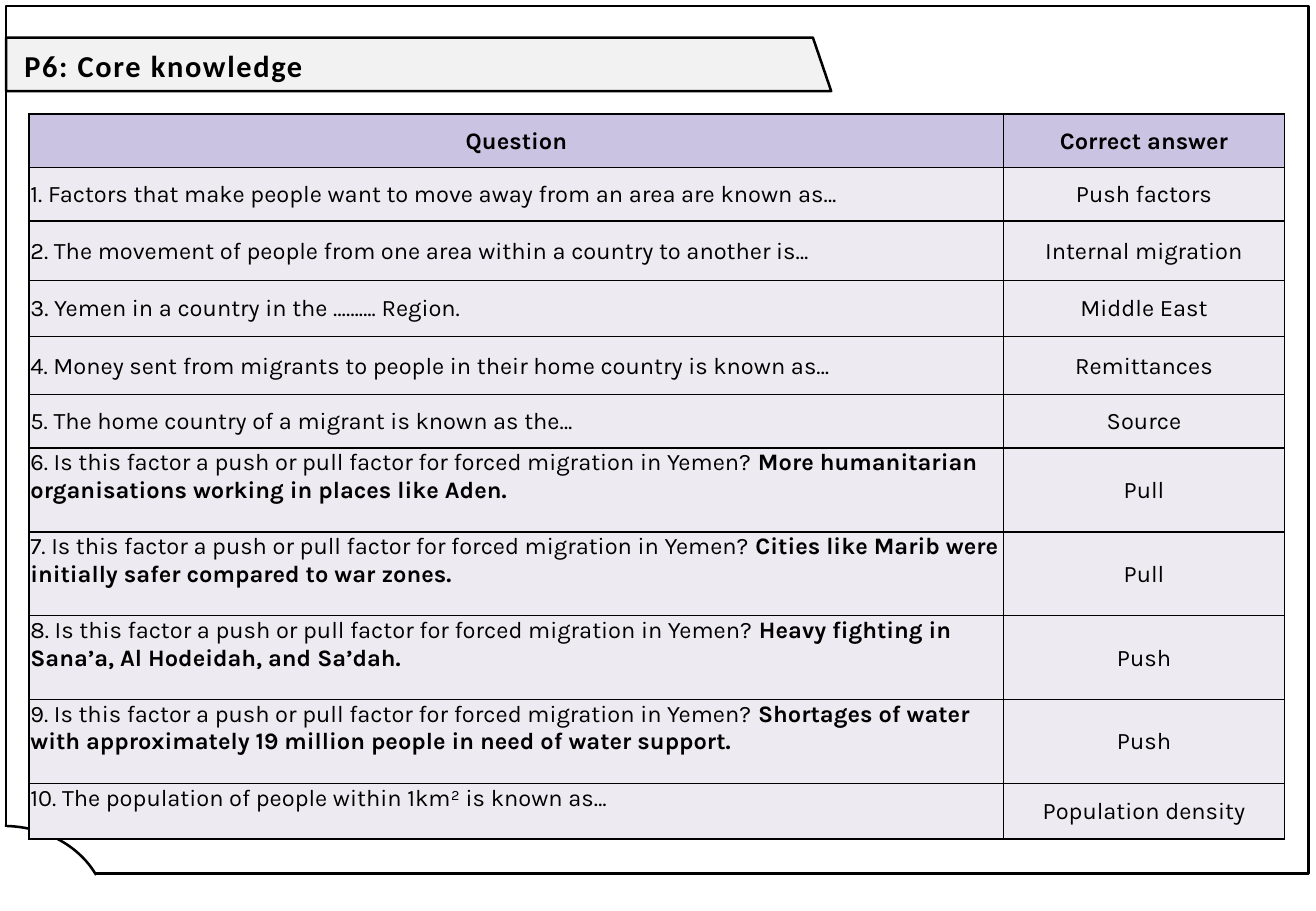
from lxml import etree
from pptx import Presentation
from pptx import util as u
from pptx.dml.color import RGBColor
from pptx.enum import shapes, text
from pptx.oxml import ns

BLACK = RGBColor(0x00, 0x00, 0x00)
WHITE = RGBColor(0xFF, 0xFF, 0xFF)
BANNER_GREY = RGBColor(0xF2, 0xF2, 0xF2)
HEADER_LILAC = RGBColor(0xCA, 0xC4, 0xE2)
ROW_LILAC = RGBColor(0xED, 0xEA, 0xF1)

FACTOR = "Is this factor a push or pull factor for forced migration in Yemen? "
QUIZ = [
    ("Factors that make people want to move away from an area are known as…", "", "Push factors"),
    ("The movement of people from one area within a country to another is…", "", "Internal migration"),
    ("Yemen in a country in the ………. Region.", "", "Middle East"),
    ("Money sent from migrants to people in their home country is known as…", "", "Remittances"),
    ("The home country of a migrant is known as the…", "", "Source"),
    (FACTOR, "More humanitarian organisations working in places like Aden.", "Pull"),
    (FACTOR, "Cities like Marib were initially safer compared to war zones.", "Pull"),
    (FACTOR, "Heavy fighting in Sana’a, Al Hodeidah, and Sa’dah.", "Push"),
    (FACTOR, "Shortages of water with approximately 19 million people in need of water support.", "Push"),
    ("The population of people within 1km² is known as…", "", "Population density"),
]
COLUMN_WIDTHS = [8.02, 2.31]
ROW_HEIGHTS = [0.44, 0.44, 0.49, 0.46, 0.48, 0.44] + [0.69] * 4 + [0.46]
FIRST_TOP_ALIGNED = 6


class QuizSlide:
    title_font = "Calibri"
    table_font = "Karla"
    outline = u.Pt(1.5)

    def __init__(self, deck):
        self.slide = deck.slides.add_slide(deck.slide_layouts[5])
        self.shapes = self.slide.shapes

    def paint(self, shape, fill, outlined=True):
        shape.shadow.inherit = False
        if fill is None:
            shape.fill.background()
        else:
            shape.fill.solid()
            shape.fill.fore_color.rgb = fill
        if outlined:
            shape.line.color.rgb = BLACK
            shape.line.width = self.outline
        else:
            shape.line.fill.background()

    def preset(self, kind, box, fill, outlined=True):
        shape = self.shapes.add_shape(kind, *map(u.Inches, box))
        self.paint(shape, fill, outlined)
        return shape

    def outline_shape(self, points, fill):
        start, *rest = [(u.Inches(x), u.Inches(y)) for x, y in points]
        builder = self.shapes.build_freeform(*start)
        builder.add_line_segments(rest, close=True)
        self.paint(builder.convert_to_shape(), fill)

    def style_run(self, run, font, size, bold):
        run.font.name = font
        run.font.size = u.Pt(size)
        run.font.bold = bold
        run.font.color.rgb = BLACK

    def title(self, wording, box):
        heading = self.shapes.title
        self.shapes.element.append(heading.element)
        heading.left, heading.top, heading.width, heading.height = map(u.Inches, box)
        frame = heading.text_frame
        frame.text = wording
        frame.word_wrap = True
        frame.auto_size = text.MSO_AUTO_SIZE.NONE
        frame.vertical_anchor = text.MSO_ANCHOR.MIDDLE
        line = frame.paragraphs[0]
        line.alignment = text.PP_ALIGN.LEFT
        line.line_spacing = 1.07
        line.space_after = u.Pt(8)
        run = line.runs[0]
        self.style_run(run, self.title_font, 18, True)
        run.font._element.set("spc", "100")

    def borders(self, cell):
        properties = cell._tc.get_or_add_tcPr()
        for side in ("a:lnL", "a:lnR", "a:lnT", "a:lnB"):
            edge = etree.SubElement(properties, ns.qn(side), w=str(u.Pt(1)))
            fill = etree.SubElement(edge, ns.qn("a:solidFill"))
            etree.SubElement(fill, ns.qn("a:srgbClr"), val=str(BLACK))

    def cell(self, cell, parts, fill, align, anchor):
        self.borders(cell)
        cell.fill.solid()
        cell.fill.fore_color.rgb = fill
        cell.margin_left = cell.margin_right = cell.margin_top = u.Inches(0.01)
        cell.margin_bottom = 0
        cell.vertical_anchor = anchor
        line = cell.text_frame.paragraphs[0]
        line.alignment = align
        for wording, bold in parts:
            run = line.add_run()
            run.text = wording
            self.style_run(run, self.table_font, 14, bold)

    def quiz_table(self, left, top):
        table = self.shapes.add_table(
            len(ROW_HEIGHTS), len(COLUMN_WIDTHS), u.Inches(left), u.Inches(top),
            u.Inches(sum(COLUMN_WIDTHS)), u.Inches(sum(ROW_HEIGHTS))).table
        table.first_row = table.horz_banding = False
        for column, width in zip(table.columns, COLUMN_WIDTHS):
            column.width = u.Inches(width)
        for row, height in zip(table.rows, ROW_HEIGHTS):
            row.height = u.Inches(height)
        center, left_side = text.PP_ALIGN.CENTER, text.PP_ALIGN.LEFT
        middle, upper = text.MSO_ANCHOR.MIDDLE, text.MSO_ANCHOR.TOP
        for index, heading in enumerate(("Question", "Correct answer")):
            self.cell(table.cell(0, index), [(heading, True)], HEADER_LILAC, center, middle)
        for number, (question, factor, answer) in enumerate(QUIZ, 1):
            parts = [(f"{number}. {question}", False)]
            if factor:
                parts.append((factor, True))
            anchor = upper if number >= FIRST_TOP_ALIGNED else middle
            self.cell(table.cell(number, 0), parts, ROW_LILAC, left_side, anchor)
            self.cell(table.cell(number, 1), [(answer, False)], ROW_LILAC, center, middle)


def main():
    deck = Presentation()
    deck.slide_width, deck.slide_height = u.Inches(10.83), u.Inches(7.5)
    page = QuizSlide(deck)
    page.outline_shape([(0.05, 0.31), (6.69, 0.31), (6.84, 0.75), (0.05, 0.75)], BANNER_GREY)
    page.preset(shapes.MSO_SHAPE.RECTANGLE, (0.05, 0.05, 10.72, 7.14), None)
    corner = page.preset(shapes.MSO_SHAPE.ARC, (-0.82, 6.8, 1.7, 1.45), WHITE)
    corner.adjustments[0], corner.adjustments[1] = 162.53, 202.27
    page.preset(shapes.MSO_SHAPE.RECTANGLE, (0.01, 6.81, 0.05, 0.1), WHITE, outlined=False)
    page.title("P6: Core knowledge", (0.1, 0.21, 6.43, 0.63))
    page.quiz_table(0.24, 0.94)
    deck.save("out.pptx")


if __name__ == "__main__":
    main()
